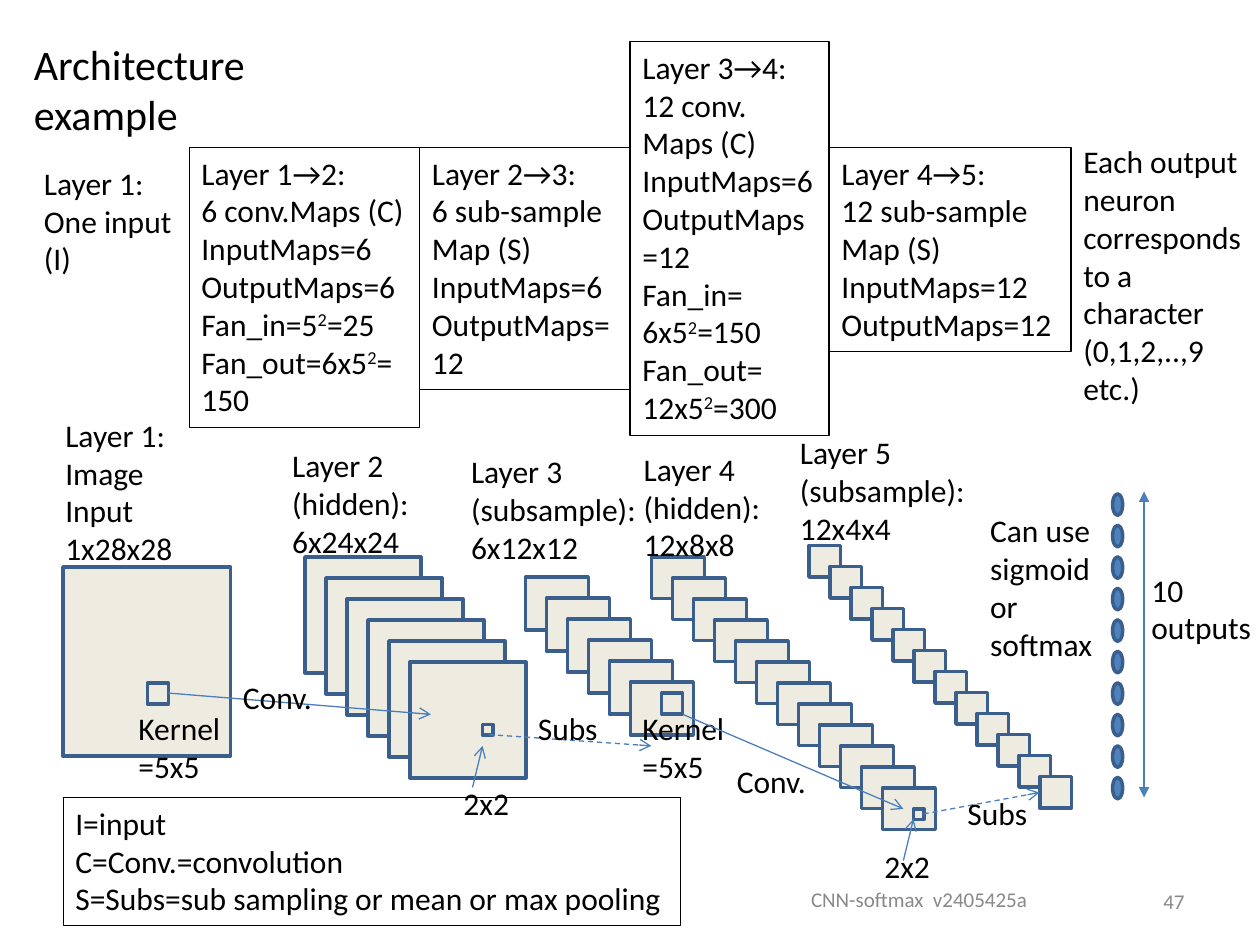
from lxml.etree import SubElement
from pptx import Presentation
from pptx.dml.color import RGBColor
from pptx.enum.dml import MSO_LINE
from pptx.enum.shapes import MSO_CONNECTOR, MSO_SHAPE
from pptx.enum.text import MSO_ANCHOR, MSO_AUTO_SIZE, PP_ALIGN
from pptx.oxml.ns import qn
from pptx.util import Inches, Pt

FONT = "Calibri"
BLACK, GRAY, CREAM = "000000", "898989", "EEECE1"
BLUE, OUTLINE, ARROW = "4F81BD", "3A5F8C", "4B7EBC"
STEP = 1 / 6
WINDOW = 1 / 12


def color(value):
    return RGBColor.from_string(value)


def add_runs(paragraph, line):
    head, *powers = line.split("^")
    paragraph.text = head
    for power in powers:
        raised = paragraph.add_run()
        raised.text = power[0]
        raised.font._element.set("baseline", "30000")
        paragraph.add_run().text = power[1:]


def add_text(slide, box, text, size=18, hue=BLACK, wrap=True, border=None,
             align=PP_ALIGN.LEFT, anchor=MSO_ANCHOR.TOP, grow=True):
    shape = slide.shapes.add_textbox(*map(Inches, box))
    if border:
        shape.line.color.rgb = color(BLACK)
        shape.line.width = Pt(border)
    frame = shape.text_frame
    frame.word_wrap = wrap
    frame.auto_size = MSO_AUTO_SIZE.SHAPE_TO_FIT_TEXT if grow else MSO_AUTO_SIZE.NONE
    frame.vertical_anchor = anchor
    for index, line in enumerate(text.split("\n")):
        paragraph = frame.add_paragraph() if index else frame.paragraphs[0]
        add_runs(paragraph, line)
        paragraph.alignment = align
        for run in paragraph.runs:
            run.font.name = FONT
            run.font.size = Pt(size)
            run.font.color.rgb = color(hue)


def add_figure(slide, box, kind=MSO_SHAPE.RECTANGLE, fill=CREAM):
    shape = slide.shapes.add_shape(kind, *map(Inches, box))
    shape.shadow.inherit = False
    shape.fill.solid()
    shape.fill.fore_color.rgb = color(fill)
    shape.line.color.rgb = color(OUTLINE)
    shape.line.width = Pt(2)


def add_arrow(slide, start, end, dashed=False, tail="arrow", head=None):
    connector = slide.shapes.add_connector(
        MSO_CONNECTOR.STRAIGHT, *map(Inches, (*start, *end)))
    connector.line.color.rgb = color(ARROW)
    connector.line.width = Pt(0.75)
    if dashed:
        connector.line.dash_style = MSO_LINE.DASH
    properties = connector._element.spPr
    line = properties.find(qn("a:ln"))
    for tag, kind in (("a:headEnd", head), ("a:tailEnd", tail)):
        if kind:
            SubElement(line, qn(tag)).set("type", kind)
    SubElement(properties, qn("a:effectLst"))


def draw_frame(slide):
    add_text(slide, (0.17, 0.08, 9, 1.25), "Architecture\nexample", size=24,
             anchor=MSO_ANCHOR.MIDDLE, grow=False)
    for box, text, align in (
        ((5.71, 6.94, 3.17, 0.4), "CNN-softmax  v2405425a", PP_ALIGN.CENTER),
        ((7.17, 6.95, 2.33, 0.4), "47", PP_ALIGN.RIGHT),
    ):
        add_text(slide, box, text, size=12, hue=GRAY, align=align,
                 anchor=MSO_ANCHOR.MIDDLE, grow=False)


def draw_maps(slide, box, count):
    left, top, width, height = box
    for index in range(count):
        add_figure(slide, (left + index * STEP, top + index * STEP, width, height))


def draw_outputs(slide, box):
    left, top, width, height = box
    for index in range(10):
        add_figure(slide, (left, top + index * 0.25, 0.08, 0.17), MSO_SHAPE.OVAL, BLUE)
    add_arrow(slide, (left + 0.25, top - 0.02), (left + 0.25, top + height),
              tail="triangle", head="triangle")
    add_text(slide, (left + 0.21, top + 0.56, 1, 0.71), "10\noutputs", wrap=False)
    add_text(slide, (left - 1.07, top + 0.09, 1.04, 1.31), "Can use sigmoid or softmax")


def draw_descriptions(slide, left, top):
    add_text(slide, (0.25, top + 0.08, 1.42, 1.01), "Layer 1:\nOne input (I)")
    columns = (
        (1.83, 2.22, 0, 0.25, "Layer 1→2:\n6 conv.Maps (C)\nInputMaps=6\nOutputMaps=6\n"
         "Fan_in=5^2=25\nFan_out=6x5^2=150"),
        (1.67, 1.92, 0, 0.25, "Layer 2→3:\n6 sub-sample\nMap (S)\nInputMaps=6\nOutputMaps=12"),
        (1.58, 3.13, -0.84, 0.75, "Layer 3→4:\n12 conv.\nMaps (C)\nInputMaps=6\n"
         "OutputMaps=12\nFan_in=\n6x5^2=150\nFan_out=\n12x5^2=300"),
        (1.92, 1.62, 0, 0.75, "Layer 4→5:\n12 sub-sample\nMap (S)\nInputMaps=12\nOutputMaps=12"),
    )
    for width, height, shift, border, text in columns:
        add_text(slide, (left, top + shift, width, height), text, border=border)
        left += width
    add_text(slide, (left, top - 0.09, 1.46, 2.22),
             "Each output neuron corresponds to a character (0,1,2,..,9 etc.)")


def draw_captions(slide):
    add_text(slide, (0.42, 3.25, 1.5, 1.62), "Layer 1:\nImage\nInput\n1x28x28")
    for left, top, width, text in (
        (2.22, 3.49, 1.14, "Layer 2\n(hidden):\n6x24x24"),
        (3.64, 3.54, 1.53, "Layer 3\n(subsample):\n6x12x12"),
        (5.01, 3.52, 1.14, "Layer 4\n(hidden):\n12x8x8"),
        (6.25, 3.39, 1.53, "Layer 5\n(subsample):\n12x4x4"),
    ):
        add_text(slide, (left, top, width, 1.01), text, wrap=False)


def draw_convolution(slide, kernel, start, end, label, name):
    add_text(slide, (*label, 0.86, 0.71), "Kernel\n=5x5", wrap=False)
    add_figure(slide, (*kernel, STEP, STEP))
    add_arrow(slide, start, end)
    add_text(slide, (*name, 0.76, 0.4), "Conv.", wrap=False)


def draw_subsampling(slide, window, start, end, label, name, pointer):
    left, top = window
    add_figure(slide, (left, top, WINDOW, WINDOW))
    add_arrow(slide, start, end, dashed=True)
    add_arrow(slide, pointer, (pointer[0] + 0.08, pointer[1] - 0.33))
    add_text(slide, (*label, 0.58, 0.4), "2x2")
    add_text(slide, (*name, 0.68, 0.4), "Subs", wrap=False)


def draw_legend(slide, box):
    add_text(slide, box, "I=input\nC=Conv.=convolution\n"
             "S=Subs=sub sampling or mean or max pooling", wrap=False, border=0.25)


def main():
    presentation = Presentation()
    presentation.slide_width = Inches(10)
    presentation.slide_height = Inches(7.5)
    slide = presentation.slides.add_slide(presentation.slide_layouts[6])
    draw_frame(slide)
    for box, count in (
        ((2.42, 4.42, 0.92, 0.92), 6),
        ((0.5, 4.5, 1.33, 1.5), 1),
        ((4.17, 4.58, 0.5, 0.42), 6),
        ((5.17, 4.42, 0.42, 0.33), 12),
        ((6.42, 4.33, 0.25, 0.25), 12),
    ):
        draw_maps(slide, box, count)
    draw_outputs(slide, (8.83, 3.92, 0.08, 2.41))
    draw_descriptions(slide, 1.5, 1.17)
    draw_captions(slide)
    draw_convolution(slide, (1.17, 5.42), (1.33, 5.5), (3.42, 5.67), (1, 5.58), (1.83, 5.33))
    draw_convolution(slide, (5.25, 5.5), (5.42, 5.67), (7.17, 6.42), (5, 5.58), (5.75, 6))
    draw_subsampling(slide, (3.83, 5.75), (3.88, 5.83), (5.17, 5.92),
                     (3.58, 6.17), (4.17, 5.58), (3.75, 6.25))
    draw_subsampling(slide, (7.25, 6.42), (7.33, 6.46), (8.25, 6.29),
                     (6.92, 6.67), (7.58, 6.25), (7.17, 6.83))
    draw_legend(slide, (0.5, 6.33, 4.9, 1.01))
    presentation.save("out.pptx")


if __name__ == "__main__":
    main()
